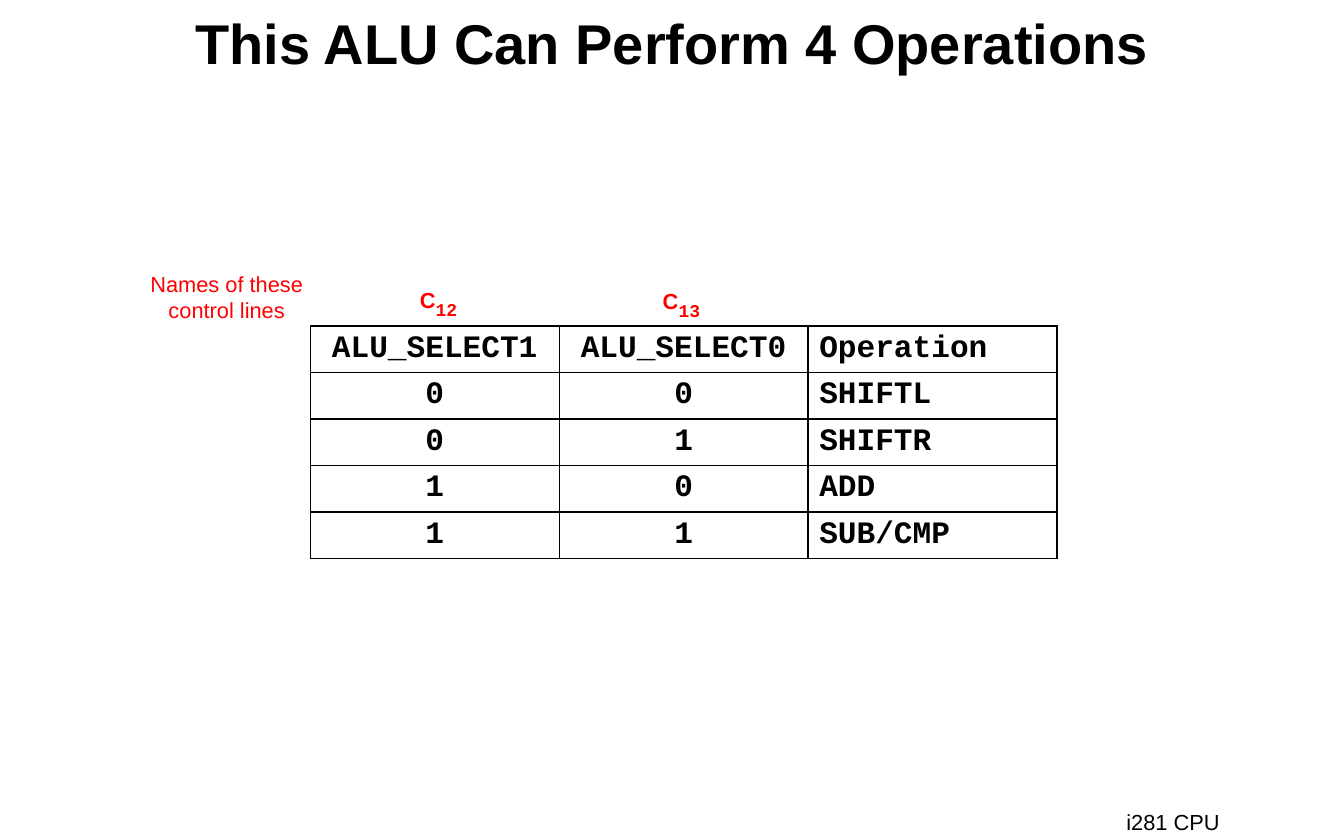
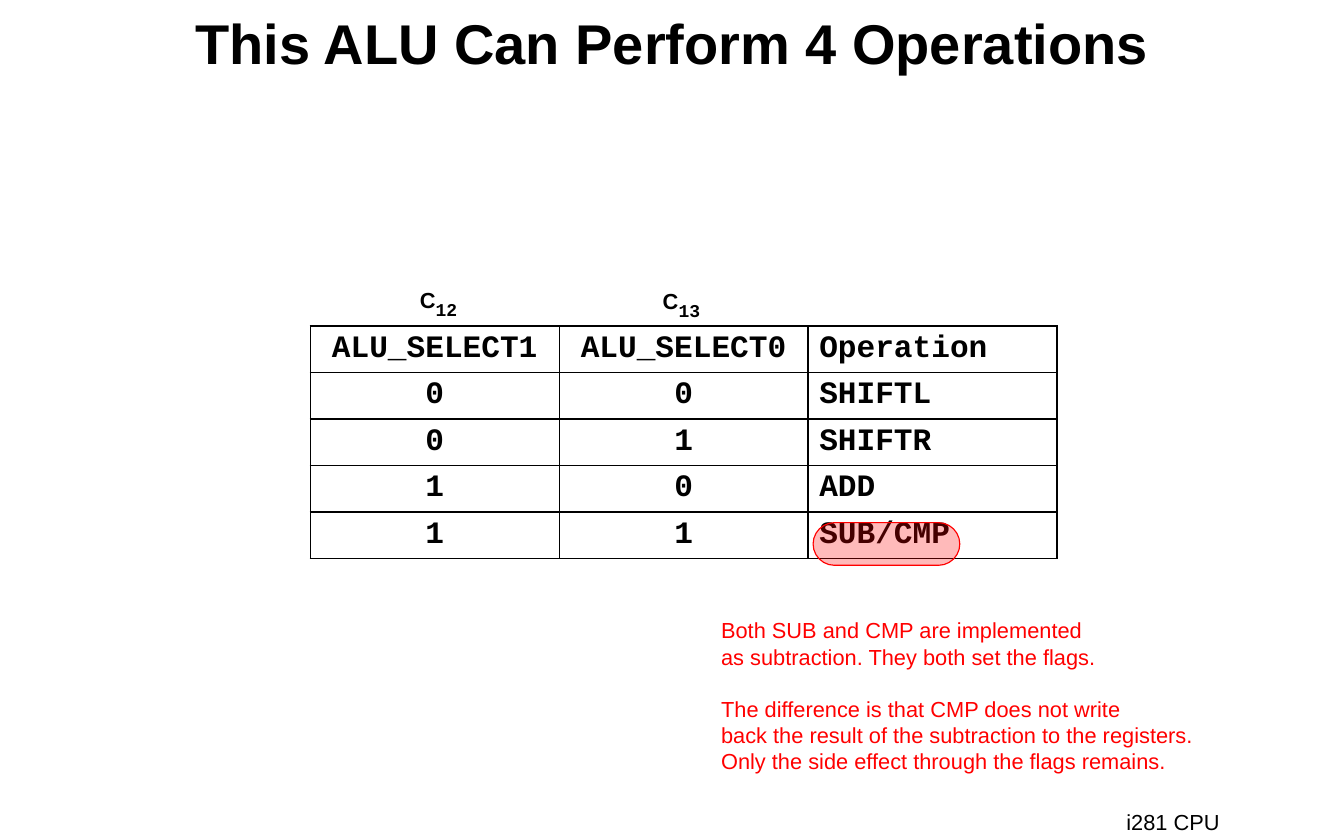
from lxml.etree import SubElement
from pptx import Presentation
from pptx.dml.color import RGBColor
from pptx.enum.shapes import MSO_SHAPE
from pptx.enum.text import MSO_ANCHOR, MSO_AUTO_SIZE, PP_ALIGN
from pptx.oxml.ns import qn
from pptx.util import Pt

COLORS = {"text": "000000", "accent": "FF0000"}
TITLE = "This ALU Can Perform 4 Operations"
OPERATIONS = [
    ("ALU_SELECT1", "ALU_SELECT0", "Operation"),
    ("0", "0", "SHIFTL"),
    ("0", "1", "SHIFTR"),
    ("1", "0", "ADD"),
    ("1", "1", "SUB/CMP"),
]
CONTROL_LINES = [("12", 262.8, 175), ("13", 419, 175.7)]
CONTROL_NAMES = ["Names of these", "control lines"]
SUBTRACTION_NOTES = [
    ["Both SUB and CMP are implemented",
     "as subtraction. They both set the flags."],
    ["The difference is that CMP does not write",
     "back the result of the subtraction to the registers.",
     "Only the side effect through the flags remains."],
]
COLUMN_WIDTH, ROW_HEIGHT = 160, 29.8


def add_span(para, text, size=14, color="text", font="Arial", bold=False):
    span = para.add_run()
    span.text = text
    span.font.name = font
    span.font.size = Pt(size)
    span.font.bold = bold
    span.font.color.rgb = RGBColor.from_string(COLORS[color])
    return span


def add_box(page, left, top, width, height):
    """Add an unwrapped text box and return its text frame."""
    frame = page.shapes.add_textbox(Pt(left), Pt(top), Pt(width), Pt(height)).text_frame
    frame.word_wrap = False
    frame.auto_size = MSO_AUTO_SIZE.SHAPE_TO_FIT_TEXT
    return frame


deck = Presentation()
deck.slide_width, deck.slide_height = Pt(864), Pt(540)
pages = []

# Title, table, control line labels and footer appear on both slides
for label_color in ("accent", "text"):
    page = deck.slides.add_slide(deck.slide_layouts[5])
    pages.append(page)

    title = page.shapes.title
    title.left, title.top, title.width, title.height = Pt(72), Pt(0), Pt(720), Pt(54)
    title.text_frame.vertical_anchor = MSO_ANCHOR.MIDDLE
    para = title.text_frame.paragraphs[0]
    para.alignment = PP_ALIGN.CENTER
    add_span(para, TITLE, size=36, bold=True)

    table = page.shapes.add_table(
        len(OPERATIONS), 3, Pt(199.5), Pt(209.5),
        Pt(3 * COLUMN_WIDTH), Pt(len(OPERATIONS) * ROW_HEIGHT)).table
    table.first_row = table.horz_banding = False
    for column in table.columns:
        column.width = Pt(COLUMN_WIDTH)
    for row, values in enumerate(OPERATIONS):
        table.rows[row].height = Pt(ROW_HEIGHT)
        for col, value in enumerate(values):
            cell = table.cell(row, col)
            para = cell.text_frame.paragraphs[0]
            para.alignment = PP_ALIGN.LEFT if col == 2 else PP_ALIGN.CENTER
            add_span(para, value, size=20, font="Courier New", bold=True)
            properties = cell._tc.get_or_add_tcPr()
            for side in ("a:lnL", "a:lnR", "a:lnT", "a:lnB"):
                border = SubElement(properties, qn(side), w=str(Pt(1)))
                fill = SubElement(border, qn("a:solidFill"))
                SubElement(fill, qn("a:srgbClr"), val=COLORS["text"])
            cell.fill.background()

    for number, left, top in CONTROL_LINES:
        para = add_box(page, left, top, 41, 24.5).paragraphs[0]
        add_span(para, "C", color=label_color, bold=True)
        subscript = add_span(para, number, size=20, color=label_color,
                             font="Courier New", bold=True)
        subscript._r.get_or_add_rPr().set("baseline", "-25000")

    footer = add_box(page, 717, 516.2, 75, 24.5)
    add_span(footer.paragraphs[0], "i281 CPU")

names_page, notes_page = pages

# Slide 1: caption beside the control lines
caption = add_box(names_page, 89.3, 170.6, 113, 41)
for index, line in enumerate(CONTROL_NAMES):
    para = caption.add_paragraph() if index else caption.paragraphs[0]
    para.alignment = PP_ALIGN.CENTER
    add_span(para, line, color="accent")

# Slide 2: highlight on SUB/CMP and its explanation
highlight = notes_page.shapes.add_shape(
    MSO_SHAPE.ROUNDED_RECTANGLE, Pt(522.7), Pt(336), Pt(94.3), Pt(27.4))
highlight.adjustments[0] = 0.5
highlight.shadow.inherit = False
highlight.fill.solid()
highlight.fill.fore_color.rgb = RGBColor.from_string(COLORS["accent"])
fill_color = highlight._element.spPr.find(qn("a:solidFill")).find(qn("a:srgbClr"))
SubElement(fill_color, qn("a:alpha"), val="27000")
highlight.line.color.rgb = RGBColor.from_string(COLORS["accent"])
highlight.line.width = Pt(0.75)

notes = add_box(notes_page, 456.5, 393.2, 319, 108.7)
for group, lines in enumerate(SUBTRACTION_NOTES):
    for index, line in enumerate(lines):
        para = notes.add_paragraph() if group or index else notes.paragraphs[0]
        if group and index == 0:
            para.space_before = Pt(16.7)
        add_span(para, line, color="accent")

deck.save("out.pptx")
